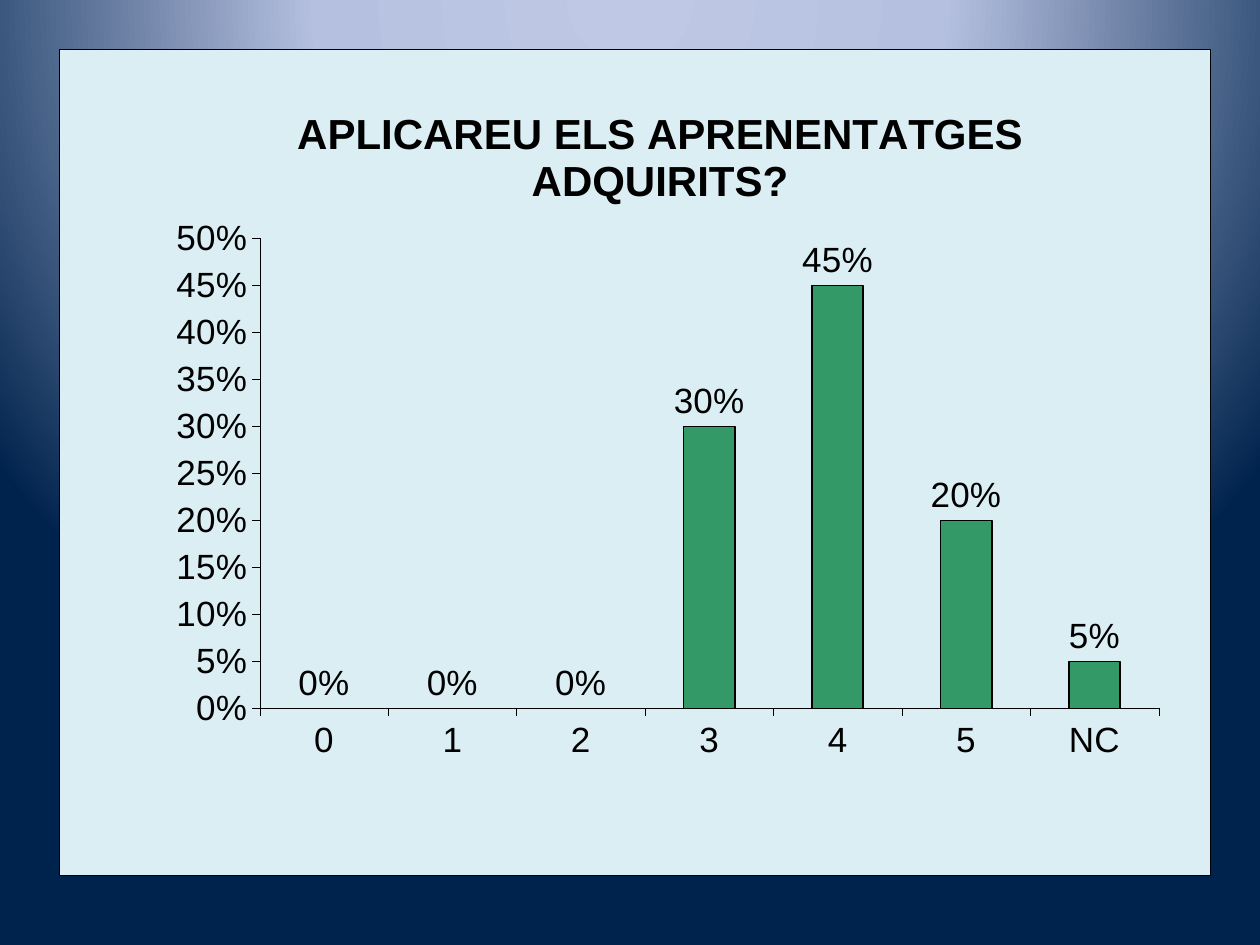
from dataclasses import dataclass

from lxml.etree import SubElement
from pptx import Presentation
from pptx.chart.data import CategoryChartData
from pptx.dml.color import RGBColor
from pptx.enum.chart import XL_CHART_TYPE, XL_LABEL_POSITION, XL_TICK_MARK
from pptx.oxml import parse_xml
from pptx.oxml.ns import nsdecls, qn
from pptx.util import Inches, Pt


@dataclass(frozen=True)
class Theme:
    font: str = "Arial"
    ink: str = "000000"
    bar: str = "339966"
    panel: str = "DBEEF4"
    backdrop: tuple = ((0, "BFC9E5"), (40, "B5C0E0"), (100, "00234D"))
    title_size: int = 24
    label_size: int = 20
    hairline: float = 0.25
    bar_outline: float = 1


THEME = Theme()
INK = RGBColor.from_string(THEME.ink)


def style_font(font, size, bold=False):
    font.name = THEME.font
    font.size = Pt(size)
    font.bold = bold
    font.color.rgb = INK


def manual_layout(**settings):
    """Return a c:layout element with the given settings, in schema order."""
    layout = parse_xml(f"<c:layout {nsdecls('c')}><c:manualLayout/></c:layout>")
    for tag, value in settings.items():
        SubElement(layout[0], qn(f"c:{tag}")).set("val", str(value))
    return layout


presentation = Presentation()
presentation.slide_width = Inches(10)
presentation.slide_height = Inches(7.5)
slide = presentation.slides.add_slide(presentation.slide_layouts[6])

# Backdrop: a circular gradient centred above the slide
stops = "".join(
    f'<a:gs pos="{percent * 1000}"><a:srgbClr val="{color}"/></a:gs>'
    for percent, color in THEME.backdrop
)
backdrop = parse_xml(
    f"<p:bg {nsdecls('p', 'a')}><p:bgPr><a:gradFill rotWithShape='1'>"
    f"<a:gsLst>{stops}</a:gsLst><a:path path='circle'>"
    "<a:fillToRect l='50000' t='-80000' r='50000' b='180000'/></a:path>"
    "</a:gradFill><a:effectLst/></p:bgPr></p:bg>"
)
slide.element.cSld.insert(0, backdrop)

# Chart of answers
answers = CategoryChartData(number_format="0%")
answers.categories = ["0", "1", "2", "3", "4", "5", "NC"]
answers.add_series("Series 1", [0, 0, 0, 0.3, 0.45, 0.2, 0.05])
chart = slide.shapes.add_chart(
    XL_CHART_TYPE.COLUMN_CLUSTERED,
    Inches(0.47), Inches(0.39), Inches(9.14), Inches(6.56), answers,
).chart
style_font(chart.font, THEME.label_size)
chart.has_legend = False

# Panel behind the chart
panel = parse_xml(
    f"<c:spPr {nsdecls('c', 'a')}>"
    f"<a:solidFill><a:srgbClr val='{THEME.panel}'/></a:solidFill>"
    f"<a:ln w='{Pt(THEME.hairline)}'><a:solidFill>"
    f"<a:srgbClr val='{THEME.ink}'/></a:solidFill></a:ln></c:spPr>"
)
chart.element.find(qn("c:chart")).addnext(panel)

# Question
chart.has_title = True
question = chart.chart_title.text_frame.paragraphs[0].add_run()
question.text = "APLICAREU ELS APRENENTATGES ADQUIRITS?"
style_font(question.font, THEME.title_size, bold=True)
chart.chart_title.include_in_layout = False
title_xml = chart.element.find(".//" + qn("c:title"))
for old_layout in title_xml.findall(qn("c:layout")):
    title_xml.remove(old_layout)
title_xml.find(qn("c:tx")).addnext(
    manual_layout(xMode="edge", yMode="edge", x=0.2, y=0.06)
)

# Plot area
plot_area = chart.element.find(".//" + qn("c:plotArea"))
for old_layout in plot_area.findall(qn("c:layout")):
    plot_area.remove(old_layout)
plot_area.insert(0, manual_layout(
    layoutTarget="inner", xMode="edge", yMode="edge",
    x=0.174, y=0.229, w=0.781, h=0.569,
))

# Axes
for axis in (chart.category_axis, chart.value_axis):
    axis.has_major_gridlines = False
    axis.major_tick_mark = XL_TICK_MARK.OUTSIDE
    axis.minor_tick_mark = XL_TICK_MARK.NONE
    axis.format.line.color.rgb = INK
    axis.format.line.width = Pt(THEME.hairline)
    style_font(axis.tick_labels.font, THEME.label_size)
percent_axis = chart.value_axis
percent_axis.minimum_scale = 0
percent_axis.maximum_scale = 0.5
percent_axis.major_unit = 0.05
percent_axis.tick_labels.number_format = "0%"
percent_axis.tick_labels.number_format_is_linked = False

# Bars and their labels
plot = chart.plots[0]
plot.vary_by_categories = False
plot.gap_width = 150
bars = plot.series[0]
bars.format.fill.solid()
bars.format.fill.fore_color.rgb = RGBColor.from_string(THEME.bar)
bars.format.line.color.rgb = INK
bars.format.line.width = Pt(THEME.bar_outline)
bar_labels = bars.data_labels
bar_labels.show_value = True
bar_labels.number_format = "0%"
bar_labels.number_format_is_linked = False
bar_labels.position = XL_LABEL_POSITION.OUTSIDE_END
style_font(bar_labels.font, THEME.label_size)

presentation.save("out.pptx")
